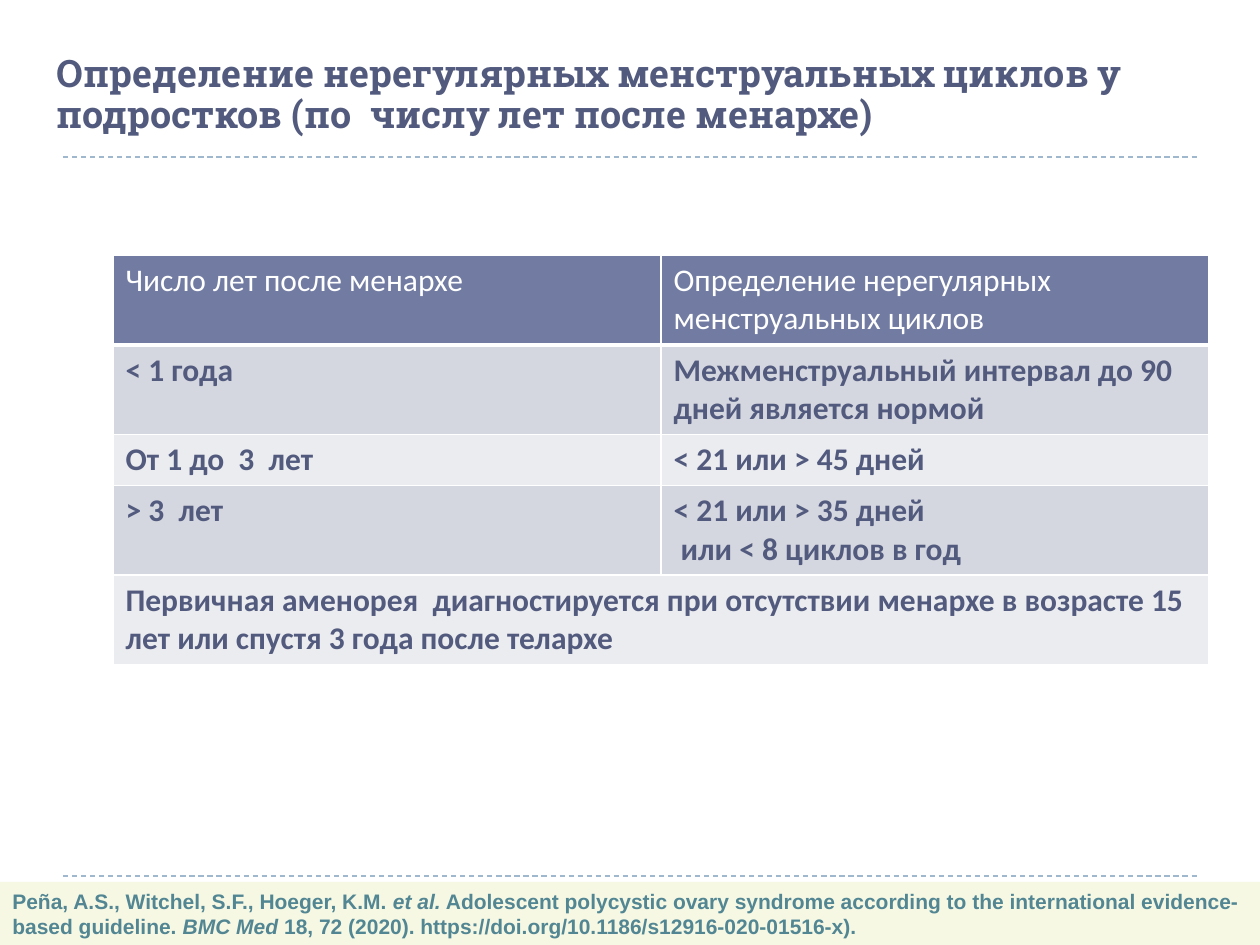
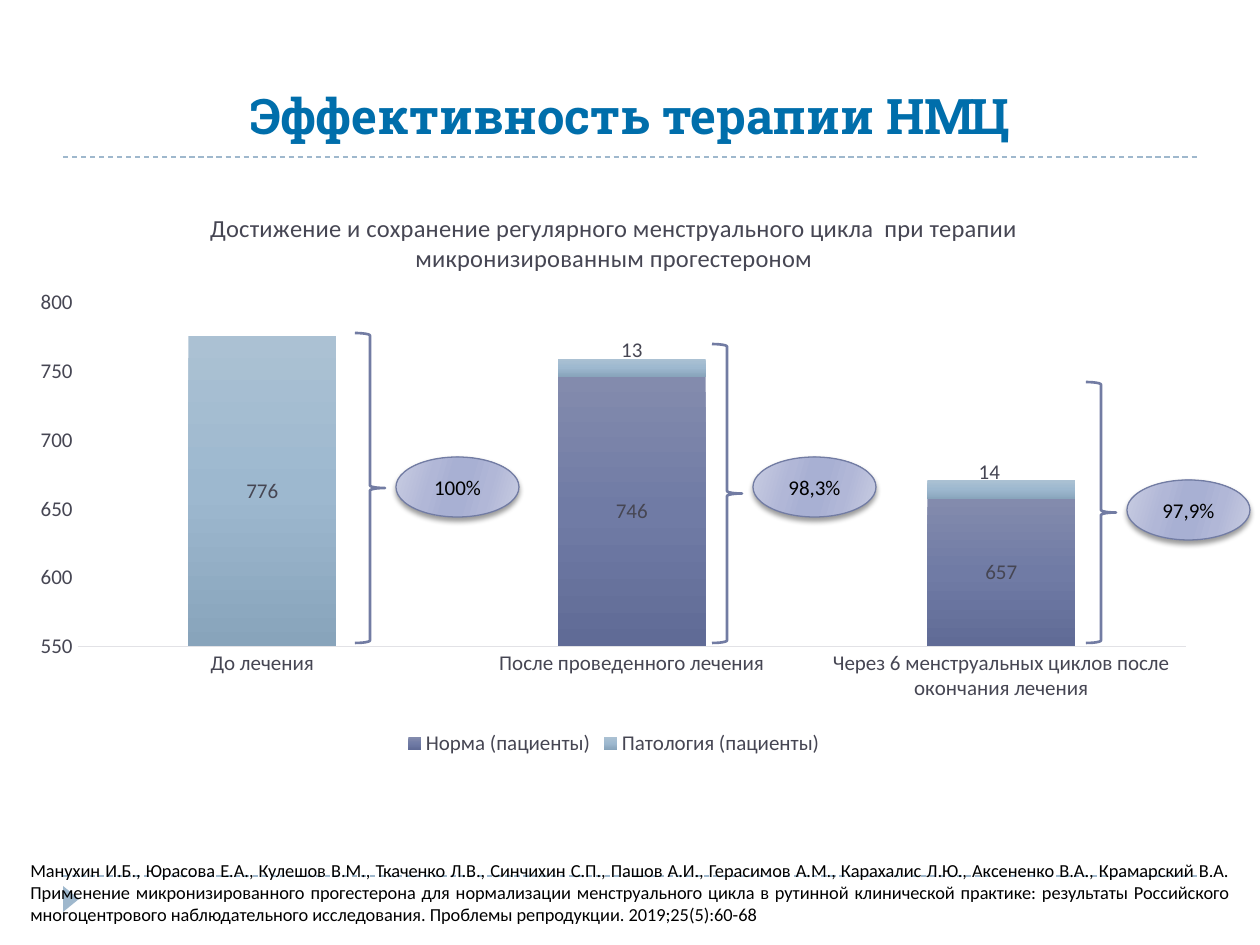
from pptx import Presentation
from pptx.chart.data import CategoryChartData as ChartData
from pptx.dml.color import RGBColor as Rgb
from pptx.enum.chart import XL_CHART_TYPE as Kind, XL_LEGEND_POSITION as Spot, XL_TICK_MARK as Tick
from pptx.enum.dml import MSO_LINE as Dash
from pptx.enum.shapes import MSO_CONNECTOR as Link, MSO_SHAPE as Form
from pptx.enum.text import MSO_ANCHOR as Anchor, MSO_AUTO_SIZE as Fit, PP_ALIGN as Align
from pptx.oxml import parse_xml
from pptx.oxml.ns import nsdecls, qn
from pptx.util import Emu, Pt

WIDE, HIGH = 1260, 945
COLORS = {
    "white": "FFFFFF", "black": "000000", "rule": "9FB8CD", "ink": "525B7E",
    "blue": "006EAB", "head": "727CA3", "dark": "D5D7E0", "light": "EBECF0",
    "cream": "F6F8E4", "teal": "528693", "grey": "464653", "axis": "E2E2E6",
}
# font, size, colour, bold
LOOKS = {
    "title": ("Roboto Slab", 21.6, "ink", True),
    "big": ("Roboto Slab", 28, "blue", True),
    "head": ("Calibri", 18, "white", False),
    "cell": ("Calibri", 18, "ink", True),
    "source": ("Arial", 12, "teal", True),
    "note": ("Calibri", 10.5, "black", False),
    "badge": ("Calibri", 12, "black", False),
    "chart": ("Calibri", 12, "grey", False),
    "name": ("Calibri", 14, "grey", False),
}
NORM = [(0, "838BAD"), (50, "707BA5"), (100, "606B96")]
ILL = [(0, "ABC1D3"), (50, "9DB8CF"), (100, "88A4BB")]
GLOW = [(0, "C9CDE2"), (30, "B1B7D7"), (45, "A8B0D3"),
        (55, "A8B0D3"), (73, "B1B7D7"), (100, "C9CDE2")]


def px(*vals):
    return [Emu(round(v * 914400 / 126)) for v in vals]


def tone(name):
    return Rgb.from_string(COLORS[name])


def style(font, look):
    face, size, color, bold = LOOKS[look]
    font.name, font.size, font.bold = face, Pt(size), bold
    font.color.rgb = tone(color)


def blend(item, fill, stops, angle):
    """Give a shape or series a gradient with any number of stops."""
    fill.gradient()
    old = item._element.find(".//" + qn("a:gradFill"))
    marks = "".join(f'<a:gs pos="{pos * 1000}"><a:srgbClr val="{color}"/></a:gs>'
                    for pos, color in stops)
    new = parse_xml(f'<a:gradFill rotWithShape="1" {nsdecls("a")}><a:gsLst>{marks}</a:gsLst>'
                    f'<a:lin ang="{angle * 60000}" scaled="0"/></a:gradFill>')
    old.getparent().replace(old, new)


def edge(cell, base):
    """Draw white borders round a cell; base is the lower width in points."""
    for side, width in zip("LRTB", (1, 1, 1, base)):
        cell._tc.get_or_add_tcPr().append(parse_xml(
            f'<a:ln{side} w="{width * 12700}" {nsdecls("a")}><a:solidFill>'
            f'<a:srgbClr val="{COLORS["white"]}"/></a:solidFill></a:ln{side}>'))


def place(area):
    """Fix the inner plot area, in shares of the chart."""
    x, y, w, h = area
    return parse_xml(
        f'<c:layout {nsdecls("c")}><c:manualLayout><c:layoutTarget val="inner"/>'
        f'<c:xMode val="edge"/><c:yMode val="edge"/><c:x val="{x}"/><c:y val="{y}"/>'
        f'<c:w val="{w}"/><c:h val="{h}"/></c:manualLayout></c:layout>')


def lift(idx, x, y):
    """Make a point label moved off its usual place."""
    shows = "".join(f'<c:show{part} val="{int(part == "Val")}"/>' for part in
                    ("LegendKey", "Val", "CatName", "SerName", "Percent", "BubbleSize"))
    return parse_xml(
        f'<c:dLbl {nsdecls("c")}><c:idx val="{idx}"/><c:layout><c:manualLayout>'
        f'<c:x val="{x}"/><c:y val="{y}"/></c:manualLayout></c:layout>{shows}</c:dLbl>')


class Deck:
    def __init__(self):
        self.prs = Presentation()
        self.prs.slide_width, self.prs.slide_height = px(WIDE, HIGH)
        self.slide = None

    def start(self):
        self.slide = self.prs.slides.add_slide(self.prs.slide_layouts[5])
        for y in (876, 157):
            self.rule(y)

    def rule(self, y):
        line = self.slide.shapes.add_connector(Link.STRAIGHT, *px(63, y, WIDE - 63, y))
        line.line.color.rgb = tone("rule")
        line.line.width = Pt(0.75)
        line.line.dash_style = Dash.DASH
        line._element.spPr.append(parse_xml(f'<a:effectLst {nsdecls("a")}/>'))

    def put(self, frame, paras, look, align=Align.LEFT):
        """Fill a frame; each paragraph is a list of (text, italic) runs."""
        frame.word_wrap = True
        for num, runs in enumerate(paras):
            para = frame.add_paragraph() if num else frame.paragraphs[0]
            para.alignment = align
            for text, slant in runs:
                run = para.add_run()
                run.text = text
                style(run.font, look)
                run.font.italic = slant

    def title(self, text, box, look, align=Align.LEFT):
        head = self.slide.shapes.title
        head.left, head.top, head.width, head.height = px(*box)
        frame = head.text_frame
        frame.auto_size, frame.vertical_anchor = Fit.NONE, Anchor.BOTTOM
        self.put(frame, [[(text, False)]], look, align)
        frame.paragraphs[0].line_spacing = 0.9

    def shape(self, form, box, fill=None, line=None, width=0.75):
        shape = self.slide.shapes.add_shape(form, *px(*box))
        shape.shadow.inherit = False
        if fill:
            shape.fill.solid()
            shape.fill.fore_color.rgb = tone(fill)
        else:
            shape.fill.background()
        if line:
            shape.line.color.rgb = tone(line)
            shape.line.width = Pt(width)
        else:
            shape.line.fill.background()
        return shape

    def band(self, box, runs):
        frame = self.shape(Form.RECTANGLE, box, "cream").text_frame
        frame.vertical_anchor = Anchor.TOP
        self.put(frame, [runs], "source")

    def note(self, box, text):
        frame = self.slide.shapes.add_textbox(*px(*box)).text_frame
        frame.auto_size = Fit.SHAPE_TO_FIT_TEXT
        self.put(frame, [[(text, False)]], "note", Align.JUSTIFY)

    def badge(self, box, text):
        oval = self.shape(Form.OVAL, box, line="head")
        blend(oval, oval.fill, GLOW, 16)
        oval._element.spPr.find(qn("a:effectLst")).append(parse_xml(
            f'<a:outerShdw blurRad="38100" dist="25400" dir="5400000" rotWithShape="0" '
            f'{nsdecls("a")}><a:srgbClr val="{COLORS["black"]}"><a:alpha val="40000"/>'
            f'</a:srgbClr></a:outerShdw>'))
        oval.text_frame.vertical_anchor = Anchor.MIDDLE
        self.put(oval.text_frame, [[(text, False)]], "badge", Align.CENTER)

    def table(self, box, rows, highs):
        """Lay out rows of cells; a row with one cell spans all columns."""
        cols = len(rows[0])
        grid = self.slide.shapes.add_table(len(rows), cols, *px(*box)).table
        for r, row in enumerate(rows):
            grid.rows[r].height = px(highs[r])[0]
            for c in range(cols):
                cell = grid.cell(r, c)
                edge(cell, 1 if r else 3)
                cell.fill.solid()
                cell.fill.fore_color.rgb = tone(
                    "head" if r == 0 else "dark" if r % 2 else "light")
            if len(row) < cols:
                grid.cell(r, 0).merge(grid.cell(r, cols - 1))
            for c, lines in enumerate(row):
                self.put(grid.cell(r, c).text_frame,
                         [[(line, False)] for line in lines.split("\n")],
                         "cell" if r else "head")

    def chart(self, box, name, cats, series, area, moves):
        """Stacked columns; series holds (name, values, stops)."""
        data = ChartData()
        data.categories = cats
        for label, vals, _ in series:
            data.add_series(label, vals)
        chart = self.slide.shapes.add_chart(Kind.COLUMN_STACKED, *px(*box), data).chart
        style(chart.font, "chart")
        chart.has_title = True
        self.put(chart.chart_title.text_frame, [[(name, False)]], "name", Align.CENTER)
        chart.chart_title.include_in_layout = False
        chart.has_legend = True
        chart.legend.position = Spot.BOTTOM
        chart.legend.include_in_layout = False
        style(chart.legend.font, "chart")

        for axis in (chart.category_axis, chart.value_axis):
            axis.major_tick_mark = axis.minor_tick_mark = Tick.NONE
            axis.has_major_gridlines = False
            style(axis.tick_labels.font, "chart")
        chart.category_axis.format.line.color.rgb = tone("axis")
        chart.category_axis.format.line.width = Pt(0.75)
        scale = chart.value_axis
        scale.format.line.fill.background()
        scale.minimum_scale, scale.maximum_scale, scale.major_unit = 550, 800, 50

        plot = chart.plots[0]
        plot.vary_by_categories = False
        plot.gap_width, plot.overlap = 150, 100
        for item, (_, _, stops) in zip(plot.series, series):
            blend(item, item.format.fill, stops, 90)
            item.data_labels.show_value = True
            style(item.data_labels.font, "chart")
        labels = plot.series[-1].data_labels._element
        for num, move in enumerate(moves):
            labels.insert(num, lift(*move))
        zone = chart._chartSpace.chart.plotArea
        for old in zone.findall(qn("c:layout")):
            zone.remove(old)
        zone.insert(0, place(area))


def cycles(deck):
    deck.start()
    deck.title("Определение нерегулярных менструальных циклов у подростков "
               "(по  числу лет после менархе)", (44, 40, 1134, 103), "title")
    rows = [
        ["Число лет после менархе", "Определение нерегулярных менструальных циклов"],
        ["< 1 года", "Межменструальный интервал до 90 дней является нормой"],
        ["От 1 до  3  лет", "< 21 или > 45 дней"],
        ["> 3  лет", "< 21 или > 35 дней\n или < 8 циклов в год"],
        ["Первичная аменорея  диагностируется при отсутствии менархе в возрасте 15 лет "
         "или спустя 3 года после телархе"],
    ]
    deck.table((113, 255, 1096, 408), rows, (90, 89, 51, 89, 89))
    deck.band((0, 882, WIDE, 63), [
        ("Peña, A.S., Witchel, S.F., Hoeger, K.M. ", False),
        ("et al.", True),
        (" Adolescent polycystic ovary syndrome according to the international "
         "evidence-based guideline. ", False),
        ("BMC Med", True),
        (" 18, 72 (2020). https://doi.org/10.1186/s12916-020-01516-x).", False)])


def therapy(deck):
    deck.start()
    deck.shape(Form.ISOSCELES_TRIANGLE, (58, 891, 26, 16), "rule").rotation = 90
    deck.title("Эффективность терапии НМЦ", (63, 64, 1134, 87), "big", Align.CENTER)
    deck.chart(
        (18, 188, 1192, 573),
        "Достижение и сохранение регулярного менструального цикла  при терапии "
        "микронизированным прогестероном",
        ["До лечения", "После проведенного лечения",
         "Через 6 менструальных циклов после окончания лечения"],
        [("Норма (пациенты)", (None, 746, 657), NORM),
         ("Патология (пациенты)", (776, 13, 14), ILL)],
        (0.05, 0.2, 0.93, 0.6), [(1, 0, -0.03), (2, -0.01, -0.03)])
    deck.note((18, 853, 1225, 79),
              "Манухин И.Б., Юрасова Е.А., Кулешов В.М., Ткаченко Л.В., Синчихин С.П., "
              "Пашов А.И., Герасимов А.М., Карахалис Л.Ю., Аксененко В.А., Крамарский В.А. "
              "Применение микронизированного прогестерона для нормализации менструального "
              "цикла в рутинной клинической практике: результаты Российского многоцентрового "
              "наблюдательного исследования. Проблемы репродукции. 2019;25(5):60-68")
    foot = 643
    for x, top, mid, share in ((355, 333, 487, "100%"), (712, 344, 487, "98,3%"),
                               (1086, 382, 510, "97,9%")):
        deck.shape(Form.RIGHT_BRACE, (x, top, 30, foot - top), line="head", width=1.5)
        deck.badge((x + 41, mid - 30, 123, 60), share)


def main():
    deck = Deck()
    cycles(deck)
    therapy(deck)
    deck.prs.save("out.pptx")


if __name__ == "__main__":
    main()
